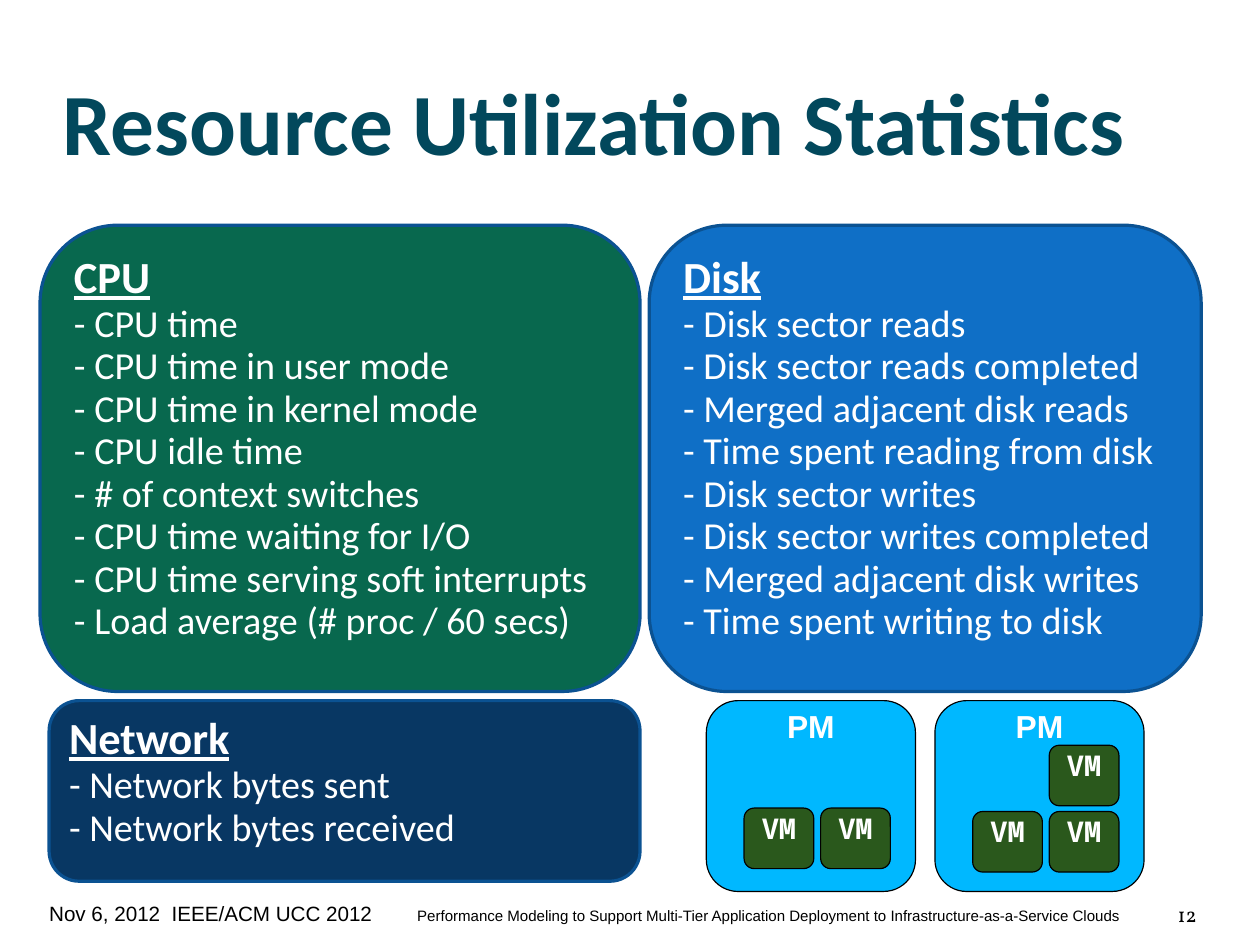
from dataclasses import dataclass

from lxml import etree
from pptx import Presentation
from pptx.dml.color import RGBColor
from pptx.enum.shapes import MSO_SHAPE
from pptx.enum.text import MSO_ANCHOR, MSO_AUTO_SIZE, PP_ALIGN
from pptx.oxml.ns import qn
from pptx.util import Cm, Pt

ROUNDED = MSO_SHAPE.ROUNDED_RECTANGLE
TOP, MIDDLE = MSO_ANCHOR.TOP, MSO_ANCHOR.MIDDLE
LEFT, CENTER, RIGHT = PP_ALIGN.LEFT, PP_ALIGN.CENTER, PP_ALIGN.RIGHT
NO_FIT = MSO_AUTO_SIZE.NONE

PX = 9144  # 100 px to the inch
SLIDE_SIZE = Cm(28), Cm(21)


@dataclass(frozen=True)
class Theme:
    title: str = "02485C"
    cpu: str = "08684E"
    disk: str = "0F6FC6"
    network: str = "083763"
    panel_line: str = "0B5292"
    pm: str = "00B8FF"
    vm: str = "2A581C"
    light: str = "FFFFFF"
    dark: str = "000000"
    body_font: str = "Calibri"
    label_font: str = "Arial"
    vm_font: str = "Noto Sans Mono"
    number_font: str = "Vollkorn"
    title_size: float = 55
    head_size: float = 28
    item_size: float = 24
    pm_size: float = 20
    vm_size: float = 18
    footer_size: float = 13
    talk_size: float = 9.5
    spacing: float = 0.93


T = Theme()

CPU_ITEMS = [
    "CPU time",
    "CPU time in user mode",
    "CPU time in kernel mode",
    "CPU idle time",
    "# of context switches",
    "CPU time waiting for I/O",
    "CPU time serving soft interrupts",
    "Load average (# proc / 60 secs)",
]
DISK_ITEMS = [
    "Disk sector reads",
    "Disk sector reads completed",
    "Merged adjacent disk reads",
    "Time spent reading from disk",
    "Disk sector writes",
    "Disk sector writes completed",
    "Merged adjacent disk writes",
    "Time spent writing to disk",
]
NETWORK_ITEMS = ["Network bytes sent", "Network bytes received"]


def emu(box):
    return [v * PX for v in box]


def style(r, font, size, color, bold=False, underline=False):
    f = r.font
    f.name, f.size, f.bold, f.underline = font, Pt(size), bold, underline
    f.color.rgb = RGBColor.from_string(color)


def setup_frame(tf, anchor, margins=(0, 0, 0, 0), wrap=True):
    tf.auto_size = NO_FIT
    tf.word_wrap = wrap
    tf.vertical_anchor = anchor
    tf.margin_left, tf.margin_top, tf.margin_right, tf.margin_bottom = emu(margins)


def rounded_box(slide, box, fill, line, width):
    s = slide.shapes.add_shape(ROUNDED, *emu(box))
    s.shadow.inherit = False
    s.fill.solid()
    s.fill.fore_color.rgb = RGBColor.from_string(fill)
    s.line.color.rgb = RGBColor.from_string(line)
    s.line.width = Pt(width)
    return s


def add_title(slide, box, text):
    s = slide.shapes.title
    s.left, s.top, s.width, s.height = emu(box)
    setup_frame(s.text_frame, MIDDLE, (0, 6, 0, 0))
    p = s.text_frame.paragraphs[0]
    p.text = text
    p.alignment = LEFT
    style(p.runs[0], T.body_font, T.title_size, T.title, bold=True)


def add_panel(slide, box, fill, heading, items):
    tf = rounded_box(slide, box, fill, T.panel_line, 2).text_frame
    setup_frame(tf, TOP, (10, 5, 10, 5))
    tf.text = "\n".join([heading] + [f"- {item}" for item in items])
    for i, p in enumerate(tf.paragraphs):
        p.alignment = LEFT
        p.line_spacing = T.spacing
        is_head = i == 0
        size = T.head_size if is_head else T.item_size
        style(p.runs[0], T.body_font, size, T.light, is_head, is_head)


def add_node(slide, box, fill, text, font, size):
    tf = rounded_box(slide, box, fill, T.dark, 0.75).text_frame
    setup_frame(tf, TOP, wrap=False)
    p = tf.paragraphs[0]
    p.text = text
    p.alignment = CENTER
    style(p.runs[0], font, size, T.light, bold=True)
    return p


def add_machine(slide, box, first_row, cells):
    """Draw a PM holding VMs at (column, row) cells; rows count upwards."""
    x, y = box[:2]
    p = add_node(slide, box, T.pm, "PM", T.label_font, T.pm_size)
    p.line_spacing = T.spacing
    for col, row in cells:
        vm_box = (x + 33 + 67 * col, y + first_row - 58 * row, 61, 53)
        add_node(slide, vm_box, T.vm, "VM", T.vm_font, T.vm_size)


def add_footer(slide, box, event, talk, number):
    x, y, w, h = box
    tf = slide.shapes.add_textbox(*emu((x, y, w - 29, h))).text_frame
    setup_frame(tf, MIDDLE)
    p = tf.paragraphs[0]
    p.line_spacing = T.spacing
    for text, size in ((f"{event}\t", T.footer_size), (talk, T.talk_size)):
        r = p.add_run()
        r.text = text
        style(r, T.label_font, size, T.dark)
    tabs = etree.SubElement(p._p.get_or_add_pPr(), qn("a:tabLst"))
    etree.SubElement(tabs, qn("a:tab"), pos=str(322 * PX), algn="l")

    tf = slide.shapes.add_textbox(*emu((x + w - 37, y, 37, h))).text_frame
    setup_frame(tf, MIDDLE)
    p = tf.paragraphs[0]
    p.text = number
    p.alignment = RIGHT
    style(p.runs[0], T.number_font, T.footer_size, T.dark)


def main():
    prs = Presentation()
    prs.slide_width, prs.slide_height = SLIDE_SIZE
    slide = prs.slides.add_slide(prs.slide_layouts[5])
    add_title(slide, (55, -9, 992, 223), "Resource Utilization Statistics")
    add_panel(slide, (35, 197, 525, 408), T.cpu, "CPU", CPU_ITEMS)
    add_panel(slide, (568, 197, 483, 408), T.disk, "Disk", DISK_ITEMS)
    add_panel(slide, (43, 613, 517, 158), T.network, "Network", NETWORK_ITEMS)
    add_machine(slide, (618, 613, 183, 167), 94, [(1, 0), (0, 0)])
    add_machine(slide, (818, 613, 183, 167), 97, [(1, 1), (0, 0), (1, 0)])
    add_footer(
        slide,
        (43, 778, 1004, 44),
        "Nov 6, 2012  IEEE/ACM UCC 2012",
        "Performance Modeling to Support Multi-Tier Application Deployment"
        " to Infrastructure-as-a-Service Clouds",
        "12",
    )
    prs.save("out.pptx")


if __name__ == "__main__":
    main()
